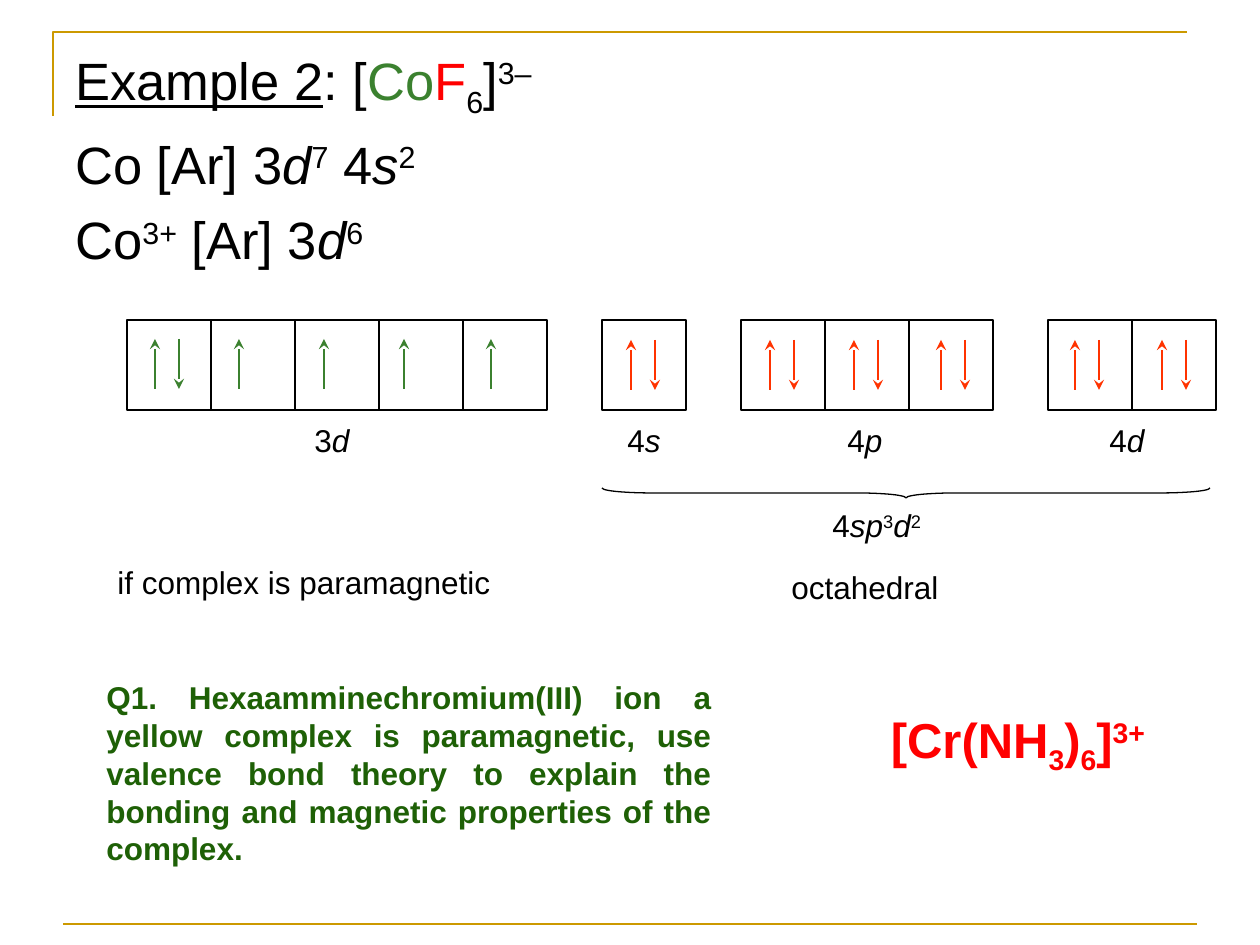
from dataclasses import dataclass

from lxml.etree import SubElement
from pptx import Presentation
from pptx.dml.color import RGBColor as Color
from pptx.enum.shapes import MSO_CONNECTOR as Connector, MSO_SHAPE as Shape
from pptx.enum.text import MSO_AUTO_SIZE as AutoSize, PP_ALIGN as Align
from pptx.oxml.ns import qn
from pptx.slide import Slide
from pptx.util import Emu, Pt

PX_PER_INCH = 126


@dataclass(frozen=True)
class Theme:
    font: str = "Arial"
    black: str = "000000"
    gold: str = "CC9900"
    green: str = "3B812F"
    dark_green: str = "1E6006"
    red: str = "FF0000"
    orange: str = "FF3300"
    title_size: int = 30
    body_size: int = 18
    formula_size: int = 28
    title_gap: int = 7
    thin: float = 0.75
    rule: float = 1.5


THEME = Theme()
SUB, SUPER = -25, 30


@dataclass(frozen=True)
class Span:
    text: str
    color: str = THEME.black
    italic: bool = False
    underline: bool = False
    bold: bool = False
    baseline: int = 0


@dataclass(frozen=True)
class TextBlock:
    left: int
    top: int
    width: int
    height: int
    size: int
    lines: tuple[tuple[Span, ...], ...]
    align: Align = Align.LEFT
    wrap: bool = True


@dataclass(frozen=True)
class Subshell:
    left: int
    arrow_offsets: tuple[int, ...]
    paired: int
    color: str
    arrow_top: int
    label_left: int
    letter: str
    shell: str = "4"


CELL_WIDTH, CELL_HEIGHT, CELL_TOP = 84, 90, 320
ARROW_LENGTH, PAIR_GAP = 50, 24
LABEL_TOP, LABEL_WIDTH, LABEL_HEIGHT = 415, 94, 63

SUBSHELLS = (
    Subshell(127, (28, 28, 29, 25, 28), 1, THEME.green, 339, 302, "d", "3"),
    Subshell(602, (29,), 1, THEME.orange, 340, 615, "s"),
    Subshell(741, (29, 29, 32), 3, THEME.orange, 340, 835, "p"),
    Subshell(1048, (27, 30), 2, THEME.orange, 340, 1097, "d"),
)

TEXT_BLOCKS = (
    TextBlock(63, 42, 1134, 624, THEME.title_size, (
        (Span("Example 2", underline=True), Span(": ["),
         Span("Co", THEME.green), Span("F", THEME.red),
         Span("6", baseline=SUB), Span("]"), Span("3–", baseline=SUPER)),
        (Span("Co [Ar] 3"), Span("d", italic=True), Span("7", baseline=SUPER),
         Span(" 4"), Span("s", italic=True), Span("2", baseline=SUPER)),
        (Span("Co"), Span("3+", baseline=SUPER), Span(" [Ar] 3"),
         Span("d", italic=True), Span("6", baseline=SUPER)),
    )),
    TextBlock(105, 557, 570, 63, THEME.body_size,
              ((Span("if complex is paramagnetic"),),)),
    TextBlock(820, 500, 223, 63, THEME.body_size, (
        (Span("4"), Span("sp", italic=True), Span("3", baseline=SUPER),
         Span("d", italic=True), Span("2", baseline=SUPER)),
    )),
    TextBlock(779, 562, 238, 63, THEME.body_size, ((Span("octahedral"),),)),
    TextBlock(94, 672, 630, 204, THEME.body_size, (
        (Span("Q1. Hexaamminechromium(III) ion a yellow complex is paramagnetic, "
              "use valence bond theory to explain the bonding and magnetic "
              "properties of the complex.", THEME.dark_green, bold=True),),
    ), Align.JUSTIFY),
    TextBlock(872, 703, 292, 72, THEME.formula_size, (
        tuple(Span(text, THEME.red, bold=True, baseline=baseline)
              for text, baseline in (("[Cr(NH", 0), ("3", SUB), (")", 0),
                                     ("6", SUB), ("]", 0), ("3+", SUPER))),
    ), Align.CENTER, wrap=False),
)


def px(length: int) -> Emu:
    return Emu(round(length * 914400 / PX_PER_INCH))


def set_line(shape, color: str, width: float) -> None:
    shape.line.color.rgb = Color.from_string(color)
    shape.line.width = Pt(width)


def set_outline(shape, color: str, width: float) -> None:
    shape.shadow.inherit = False
    shape.fill.background()
    set_line(shape, color, width)


def add_text(slide: Slide, block: TextBlock) -> None:
    box = slide.shapes.add_textbox(
        px(block.left), px(block.top), px(block.width), px(block.height))
    frame = box.text_frame
    frame.word_wrap = block.wrap
    frame.auto_size = AutoSize.NONE
    for index, spans in enumerate(block.lines):
        paragraph = frame.add_paragraph() if index else frame.paragraphs[0]
        paragraph.alignment = block.align
        if index:
            paragraph.space_before = Pt(THEME.title_gap)
        for span in spans:
            run = paragraph.add_run()
            run.text = span.text
            font = run.font
            font.name = THEME.font
            font.size = Pt(block.size)
            font.color.rgb = Color.from_string(span.color)
            font.italic = span.italic
            font.underline = span.underline
            font.bold = span.bold
            if span.baseline:
                run._r.get_or_add_rPr().set("baseline", str(span.baseline * 1000))


def add_line(slide: Slide, start: tuple[int, int], end: tuple[int, int],
             color: str, width: float, arrow: bool = False) -> None:
    line = slide.shapes.add_connector(
        Connector.STRAIGHT, px(start[0]), px(start[1]), px(end[0]), px(end[1]))
    set_line(line, color, width)
    if arrow:
        SubElement(line.line._get_or_add_ln(), qn("a:tailEnd"), type="stealth")
    SubElement(line._element.spPr, qn("a:effectLst"))


def add_frame(slide: Slide) -> None:
    builder = slide.shapes.build_freeform(px(53), px(116))
    builder.add_line_segments([(px(53), px(32)), (px(1187), px(32))], close=False)
    set_outline(builder.convert_to_shape(), THEME.gold, THEME.rule)
    add_line(slide, (63, 924), (1197, 924), THEME.gold, THEME.rule)


def add_subshell(slide: Slide, subshell: Subshell) -> None:
    top, bottom = subshell.arrow_top, subshell.arrow_top + ARROW_LENGTH
    for index, offset in enumerate(subshell.arrow_offsets):
        left = subshell.left + index * CELL_WIDTH
        cell = slide.shapes.add_shape(
            Shape.RECTANGLE, px(left), px(CELL_TOP), px(CELL_WIDTH), px(CELL_HEIGHT))
        set_outline(cell, THEME.black, THEME.thin)
        up = left + offset
        add_line(slide, (up, bottom), (up, top), subshell.color, THEME.thin, True)
        if index < subshell.paired:
            down = up + PAIR_GAP
            add_line(slide, (down, top), (down, bottom), subshell.color, THEME.thin, True)
    label = (Span(subshell.shell), Span(subshell.letter, italic=True))
    add_text(slide, TextBlock(subshell.label_left, LABEL_TOP, LABEL_WIDTH,
                              LABEL_HEIGHT, THEME.body_size, (label,)))


def add_brace(slide: Slide) -> None:
    brace = slide.shapes.add_shape(
        Shape.RIGHT_BRACE, px(901), px(189), px(10), px(608))
    brace.rotation = 90
    brace.adjustments[0] = 4.94
    brace.adjustments[1] = 0.5
    set_outline(brace, THEME.black, THEME.thin)


def main() -> None:
    presentation = Presentation()
    presentation.slide_width, presentation.slide_height = px(1260), px(945)
    slide = presentation.slides.add_slide(presentation.slide_layouts[6])
    add_frame(slide)
    for subshell in SUBSHELLS:
        add_subshell(slide, subshell)
    add_brace(slide)
    for block in TEXT_BLOCKS:
        add_text(slide, block)
    presentation.save("out.pptx")


if __name__ == "__main__":
    main()
